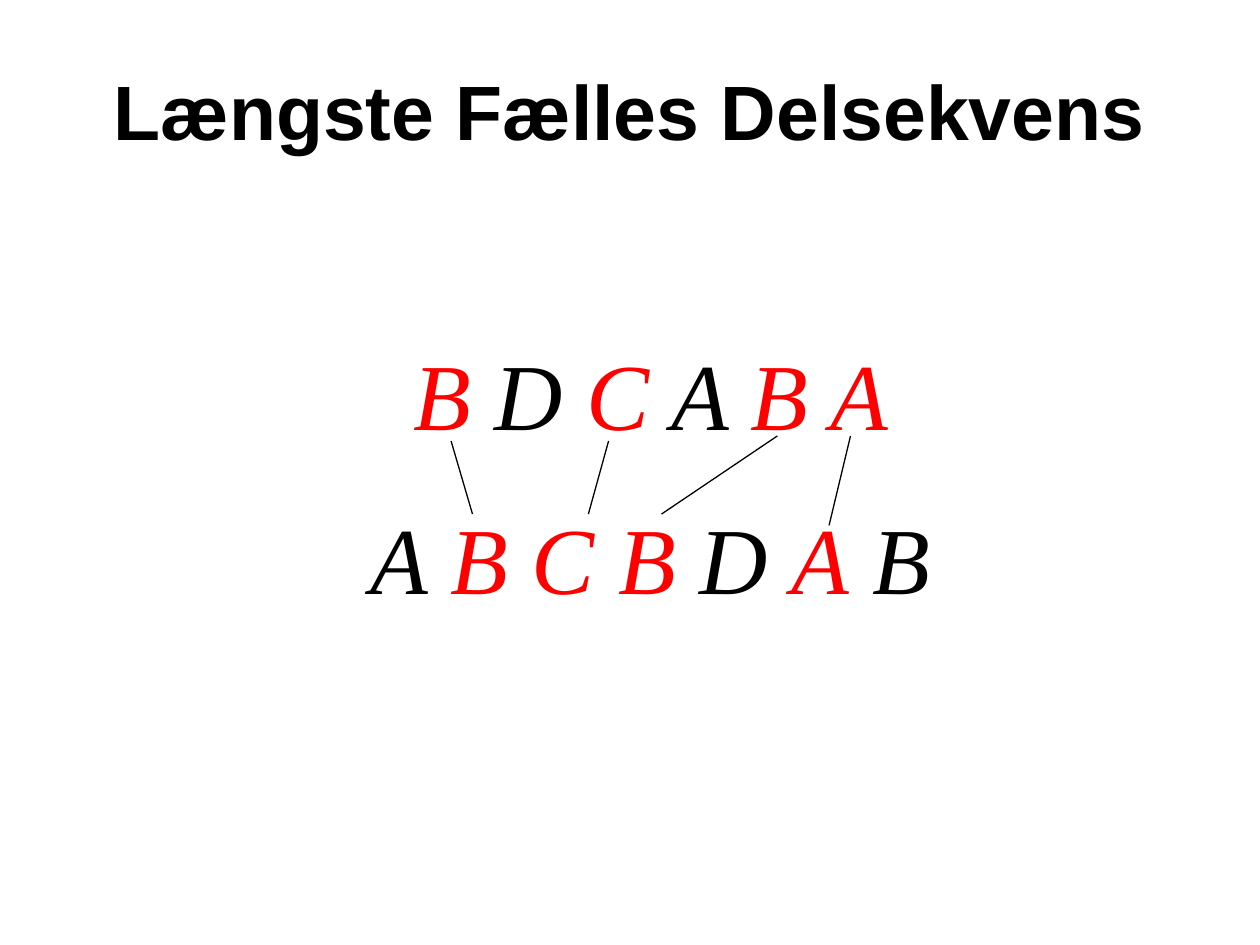
from lxml import etree
from pptx import Presentation
from pptx.dml.color import RGBColor
from pptx.enum import shapes, text
from pptx.oxml import ns
from pptx.util import Inches, Pt

BLACK = RGBColor(0, 0, 0)
RED = RGBColor(255, 0, 0)

# Each sequence is a list of (letters, colour) spans; red marks the common part
SEQUENCES = [
    [("B", RED), (" D ", BLACK), ("C", RED), (" A ", BLACK), ("B A", RED)],
    [("A ", BLACK), ("B C B", RED), (" D ", BLACK), ("A", RED), (" B", BLACK)],
]

# Start and end of each match line, relative to the sequence box
MATCHES = [
    (2.08, 0.92, 2.25, 1.5),
    (3.33, 0.92, 3.17, 1.5),
    (4.67, 0.88, 3.75, 1.5),
    (5.25, 0.88, 5.08, 1.59),
]


def add_text_frame(page, left, top, width, height):
    box = page.shapes.add_textbox(
        Inches(left), Inches(top), Inches(width), Inches(height))
    frame = box.text_frame
    frame.word_wrap = True
    frame.vertical_anchor = text.MSO_ANCHOR.MIDDLE
    return frame


def add_span(para, words, font_name, size, color):
    span = para.add_run()
    span.text = words
    span.font.name = font_name
    span.font.size = Pt(size)
    span.font.color.rgb = color
    return span


def add_title(page, left, top, width, height):
    para = add_text_frame(page, left, top, width, height).paragraphs[0]
    para.alignment = text.PP_ALIGN.CENTER
    span = add_span(para, "Længste Fælles Delsekvens", "Arial", 44, BLACK)
    span.font.bold = True


def add_sequences(page, left, top, width, height):
    # The two sequences, one paragraph each
    frame = add_text_frame(page, left, top, width, height)
    for index, sequence in enumerate(SEQUENCES):
        para = frame.add_paragraph() if index else frame.paragraphs[0]
        para.alignment = text.PP_ALIGN.CENTER
        para.space_before = Pt(29 if index else 0)
        for letters, color in sequence:
            add_span(para, letters, "Times New Roman", 54, color).font.italic = True

    # Lines joining the matching letters
    for x1, y1, x2, y2 in MATCHES:
        line = page.shapes.add_connector(
            shapes.MSO_CONNECTOR.STRAIGHT,
            Inches(left + x1), Inches(top + y1),
            Inches(left + x2), Inches(top + y2))
        line.line.color.rgb = BLACK
        line.line.width = Pt(0.75)
        etree.SubElement(line._element.spPr, ns.qn("a:effectLst"))


def main():
    deck = Presentation()
    deck.slide_width, deck.slide_height = Inches(10), Inches(7.5)
    page = deck.slides.add_slide(deck.slide_layouts[6])
    add_title(page, 0, 0.33, 10, 1.08)
    add_sequences(page, 1.5, 2.58, 7.33, 2.37)
    deck.save("out.pptx")


if __name__ == "__main__":
    main()
